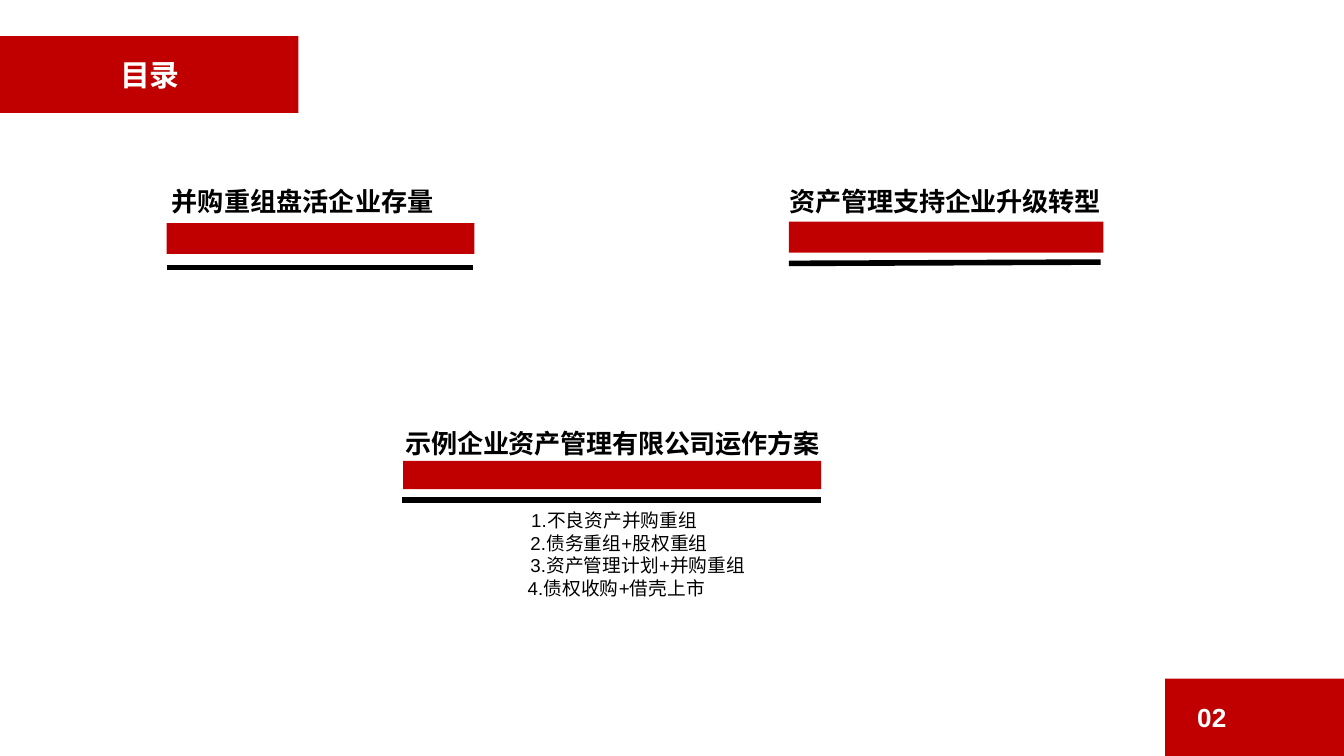
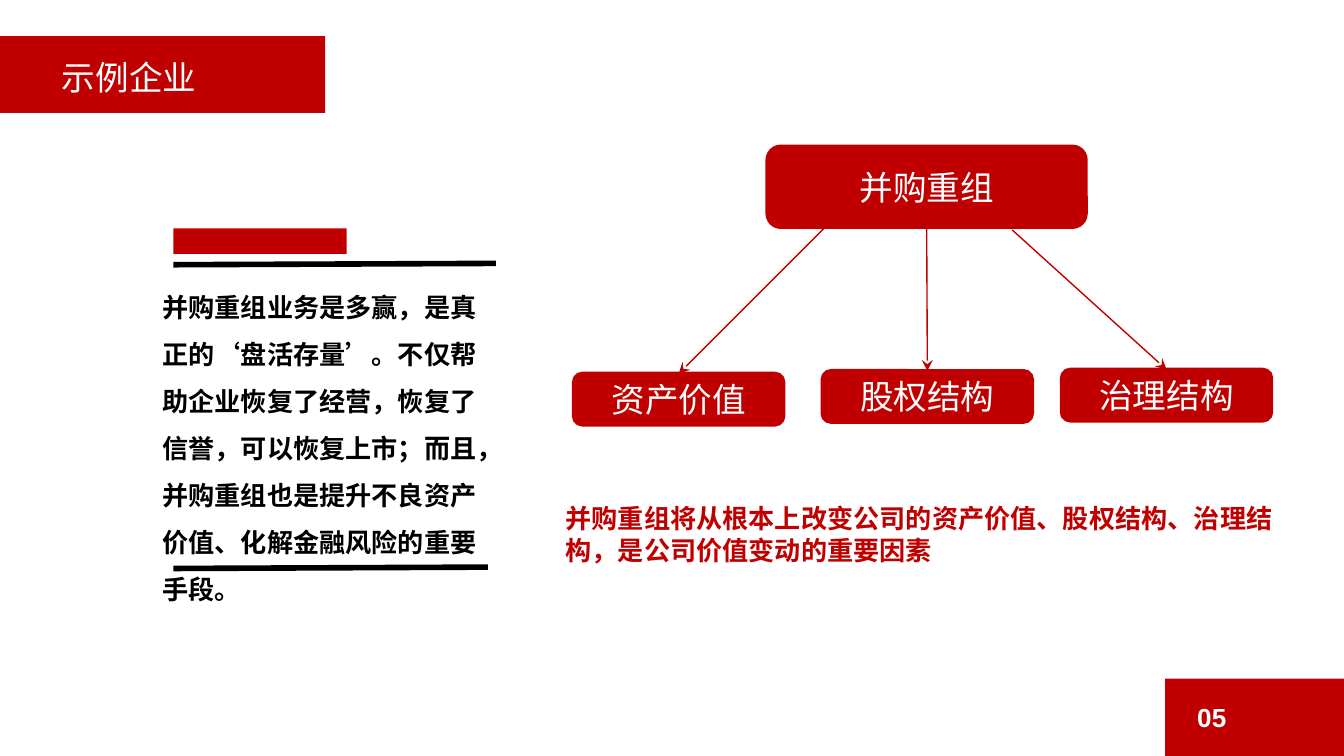
from dataclasses import dataclass
from typing import Optional

from pptx import Presentation
from pptx.dml.color import RGBColor
from pptx.enum.shapes import MSO_CONNECTOR, MSO_SHAPE
from pptx.enum.text import MSO_ANCHOR, MSO_AUTO_SIZE, PP_ALIGN
from pptx.oxml.ns import qn
from pptx.util import Inches, Pt

RECT, ROUND = MSO_SHAPE.RECTANGLE, MSO_SHAPE.ROUNDED_RECTANGLE
LINE = MSO_CONNECTOR.STRAIGHT
LEFT, CENTER = PP_ALIGN.LEFT, PP_ALIGN.CENTER
TOP, MIDDLE = MSO_ANCHOR.TOP, MSO_ANCHOR.MIDDLE
GROW = MSO_AUTO_SIZE.SHAPE_TO_FIT_TEXT

RED, BLACK, WHITE = "C00000", "000000", "FFFFFF"
LATIN, HAN = "Arial", "Noto Sans CJK SC"
FIRM = "示例企业"

# Square grid: 100 columns across, 56.25 rows down
WIDTH, HEIGHT = Inches(10), Inches(5.625)
UNIT = WIDTH / 100


@dataclass(frozen=True)
class Box:
    x: float
    y: float
    w: float
    h: float


@dataclass(frozen=True)
class Style:
    size: float
    color: str = BLACK
    bold: bool = False
    align: Optional[PP_ALIGN] = LEFT
    track: int = 0  # hundredths of a point
    space: Optional[float] = None
    face: str = LATIN


@dataclass(frozen=True)
class Topic:
    text: str
    box: Box
    bar: Box
    rule: tuple
    track: int = 0


@dataclass(frozen=True)
class Leaf:
    text: str
    x: float
    y: float
    start: Optional[tuple] = None  # None: middle of the root's lower side


HEAD = Style(14, bold=True)
PAGE = Style(14, WHITE, True)
NODE = Style(18, WHITE, align=CENTER)
ITEM = Style(10, align=CENTER, track=10)
BODY = Style(14, bold=True, space=1.5)
NOTE = Style(14, RED, True, face=HAN)

TOPICS = [
    Topic("并购重组盘活企业存量", Box(11.8, 13.3, 22.8, 3),
          Box(12.4, 16.6, 22.9, 2.3), (12.4, 19.9, 35.2, 19.9)),
    Topic(f"{FIRM}资产管理有限公司运作方案", Box(29.2, 31.3, 33.6, 3),
          Box(30, 34.3, 31.1, 2.1), (29.9, 37.2, 61.1, 37.2), -20),
    Topic("资产管理支持企业升级转型", Box(57.8, 13.3, 25.7, 3),
          Box(58.7, 16.5, 23.4, 2.3), (58.7, 19.6, 81.9, 19.5), -20),
]
# Each step with its left indent
STEPS = [("1.不良资产并购重组", 0), ("2.债务重组+股权重组", 0.7),
         ("3.资产管理计划+并购重组", 3.5), ("4.债权收购+借壳上市", 0.3)]
LEAVES = [Leaf("资产价值", 42.7, 27.8, (61.3, 17)),
          Leaf("股权结构", 61.2, 27.6),
          Leaf("治理结构", 79, 27.5, (75.3, 17.1))]


def rgb(code: str) -> RGBColor:
    return RGBColor.from_string(code)


def grid(*units: float) -> list:
    return [round(n * UNIT) for n in units]


def place(box: Box) -> list:
    return grid(box.x, box.y, box.w, box.h)


def write(shape, lines: list, style: Style, anchor=TOP) -> None:
    frame = shape.text_frame
    frame.word_wrap = True
    frame.vertical_anchor = anchor
    frame.text = "\n".join(lines)
    for para in frame.paragraphs:
        para.alignment = style.align
        para.line_spacing = style.space
        font = para.font
        font.name, font.size, font.bold = style.face, Pt(style.size), style.bold
        font.color.rgb = rgb(style.color)
        if style.track:
            for run in para.runs:
                run.font._element.set("spc", str(style.track))


def label(slide, box: Box, lines: list, style: Style):
    shape = slide.shapes.add_textbox(*place(box))
    write(shape, lines, style)
    shape.text_frame.auto_size = GROW
    return shape


def block(slide, box: Box, kind=RECT):
    shape = slide.shapes.add_shape(kind, *place(box))
    shape.shadow.inherit = False
    shape.fill.solid()
    shape.fill.fore_color.rgb = rgb(RED)
    shape.line.fill.background()
    return shape


def node(slide, box: Box, text: str):
    shape = block(slide, box, ROUND)
    shape.line.color.rgb = rgb(RED)
    shape.line.width = Pt(2)
    write(shape, [text], NODE, MIDDLE)
    return shape


def rule(slide, ends: tuple, color: str = BLACK, width: float = 3):
    line = slide.shapes.add_connector(LINE, *grid(*ends))
    line.line.color.rgb = rgb(color)
    line.line.width = Pt(width)
    props = line._element.spPr
    props.append(props.makeelement(qn("a:effectLst"), {}))
    return line


def arrow(slide, root, leaf, start: Optional[tuple]) -> None:
    line = rule(slide, (*(start or (0, 0)), 0, 0), RED, 0.75)
    if start is None:
        line.begin_connect(root, 2)
    line.end_connect(leaf, 0)
    edge = line.line._get_or_add_ln()
    edge.append(edge.makeelement(qn("a:tailEnd"), {"type": "stealth"}))


def start(deck, text: str, page: str, band: float, box: Box, style: Style):
    """Add a slide with its page number, title band and title."""
    slide = deck.slides.add_slide(deck.slide_layouts[5])
    block(slide, Box(86.7, 50.5, 13.3, 5.75))
    label(slide, Box(88.1, 51.7, 5, 3.3), [page], PAGE)
    block(slide, Box(0, 2.7, band, 5.7))
    title = slide.shapes.title
    title.left, title.top, title.width, title.height = place(box)
    write(title, [text], style)
    title.text_frame.auto_size = GROW
    title.element.getparent().append(title.element)  # in front of the band
    return slide


def contents(deck) -> None:
    slide = start(deck, "目录", "02", 22.2, Box(5.3, 3.7, 11.7, 3.3),
                  Style(16, WHITE, True, CENTER, -10))
    for topic in TOPICS:
        style = Style(14, bold=True, track=topic.track)
        label(slide, topic.box, [topic.text], style)
        rule(slide, topic.rule)
        block(slide, topic.bar)
    # Steps under the middle topic
    steps = label(slide, Box(30.3, 37.4, 30.8, 9.1),
                  [text for text, _ in STEPS], ITEM)
    for para, (_, indent) in zip(steps.text_frame.paragraphs, STEPS):
        para._p.get_or_add_pPr().set("marL", str(round(indent * UNIT)))


def merger(deck) -> None:
    slide = start(deck, FIRM, "05", 24.2, Box(3.6, 3.7, 26.8, 4.2),
                  Style(18, WHITE))
    # Statement between two rules
    rule(slide, (12.9, 19.7, 36.9, 19.6))
    block(slide, Box(12.9, 17, 12.9, 1.9))
    rule(slide, (12.9, 42.3, 36.3, 42.2))
    label(slide, Box(11.1, 20, 27.2, 22), [
        "并购重组业务是多赢，是真正的‘盘活存量’。不仅帮助企业恢复了经营，"
        "恢复了信誉，可以恢复上市；而且，并购重组也是提升不良资产价值、"
        "化解金融风险的重要手段。"], BODY)
    # Tree
    root = node(slide, Box(57.1, 10.9, 23.7, 6), "并购重组")
    for leaf in LEAVES:
        shape = node(slide, Box(leaf.x, leaf.y, 15.6, 3.8), leaf.text)
        arrow(slide, root, shape, leaf.start)
    label(slide, Box(41.1, 36.9, 55.6, 5.7), [
        "并购重组将从根本上改变公司的资产价值、股权结构、治理结构，"
        "是公司价值变动的重要因素"], NOTE)


def main() -> None:
    deck = Presentation()
    deck.slide_width, deck.slide_height = WIDTH, HEIGHT
    contents(deck)
    merger(deck)
    deck.save("out.pptx")


if __name__ == "__main__":
    main()
